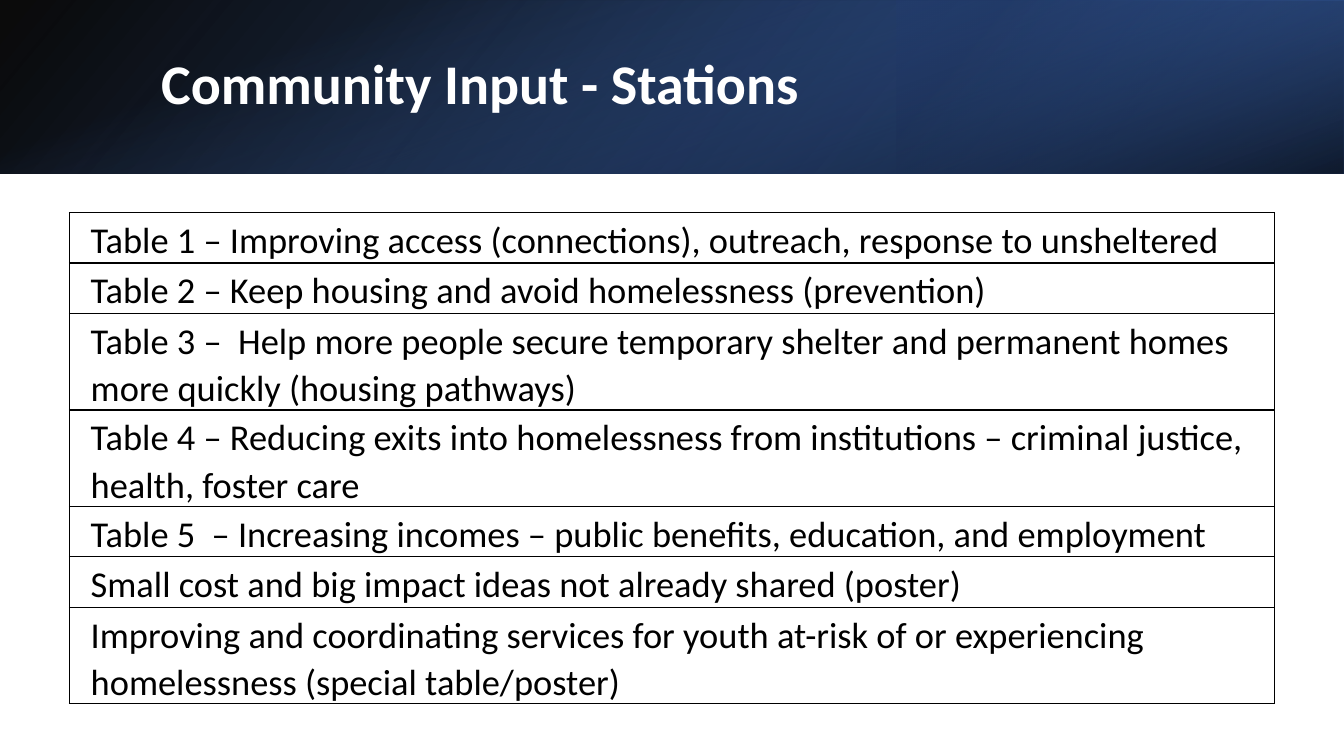
"""Build the Community Input stations slide."""
from lxml import etree
from pptx import Presentation
from pptx import util as u
from pptx.dml.color import RGBColor
from pptx.enum import shapes, text
from pptx.oxml import ns

COLORS = {"black": "000000", "white": "FFFFFF", "blue": "4472C4",
          "mid_blue": "2F5597", "navy": "203864"}
FONT = "Calibri"
BANNER_HEIGHT = 1.72

BANNER_LAYERS = [
    ((0, 0, 13.33, BANNER_HEIGHT), 0, True, 140,
     [(0, "black", 96), (100, "mid_blue", 100)]),
    ((8.89, 0, 4.44, BANNER_HEIGHT), 180, True, 320,
     [(19, "navy", 68), (100, "blue", 79)]),
    ((5.8, -5.8, BANNER_HEIGHT, 13.33), 90, False, 340,
     [(23, "blue", 0), (99, "black", 74)]),
]

STATIONS = [
    ("Table 1 – Improving access (connections), outreach, response to unsheltered", 0.5),
    ("Table 2 – Keep housing and avoid homelessness (prevention)", 0.5),
    ("Table 3 –  Help more people secure temporary shelter and permanent homes "
     "more quickly (housing pathways)", 0.93),
    ("Table 4 – Reducing exits into homelessness from institutions – criminal justice, "
     "health, foster care", 0.93),
    ("Table 5  – Increasing incomes – public benefits, education, and employment", 0.5),
    ("Small cost and big impact ideas not already shared (poster)", 0.5),
    ("Improving and coordinating services for youth at-risk of or experiencing "
     "homelessness (special table/poster)", 0.86),
]


def style_paragraph(paragraph, size, color, spacing, bold=False):
    paragraph.line_spacing = spacing
    paragraph.font.name = FONT
    paragraph.font.size = u.Pt(size)
    paragraph.font.bold = bold
    paragraph.font.color.rgb = RGBColor.from_string(COLORS[color])


def add_borders(cell, color, width):
    properties = cell._tc.get_or_add_tcPr()
    for side in ("lnL", "lnR", "lnT", "lnB"):
        line = etree.SubElement(properties, ns.qn(f"a:{side}"), w=str(u.Pt(width)))
        fill = etree.SubElement(line, ns.qn("a:solidFill"))
        etree.SubElement(fill, ns.qn("a:srgbClr"), val=COLORS[color])


presentation = Presentation()
presentation.slide_width = u.Inches(13.33)
presentation.slide_height = u.Inches(7.5)
slide = presentation.slides.add_slide(presentation.slide_layouts[6])

for box, rotation, flipped, angle, stops in BANNER_LAYERS:
    shape = slide.shapes.add_shape(
        shapes.MSO_SHAPE.RECTANGLE, *[u.Inches(length) for length in box])
    shape.shadow.inherit = False
    shape.rotation = rotation
    if flipped:
        shape._element.spPr.find(ns.qn("a:xfrm")).set("flipH", "1")
    shape.line.fill.background()
    shape.fill.gradient()
    shape.fill.gradient_angle = 360 - angle
    for stop, (position, color, opacity) in zip(shape.fill.gradient_stops, stops):
        stop.position = position / 100
        stop.color.rgb = RGBColor.from_string(COLORS[color])
    for element, (position, color, opacity) in zip(
            shape._element.spPr.iter(ns.qn("a:srgbClr")), stops):
        etree.SubElement(element, ns.qn("a:alpha"), val=str(opacity * 1000))

title = slide.shapes.add_textbox(
    u.Inches(1.5), u.Inches(0.38), u.Inches(10.98), u.Inches(0.96))
title.text_frame.word_wrap = True
title.text_frame.vertical_anchor = text.MSO_ANCHOR.MIDDLE
title.text_frame.text = "Community Input - Stations"
style_paragraph(title.text_frame.paragraphs[0], 40, "white", 0.9, bold=True)

table = slide.shapes.add_table(
    len(STATIONS), 1, u.Inches(0.69), u.Inches(2.11),
    u.Inches(11.95), u.Inches(4.87)).table
table.first_row = False
table.horz_banding = False
for row, (station, height) in zip(table.rows, STATIONS):
    row.height = u.Inches(height)
    cell = row.cells[0]
    cell.margin_left = cell.margin_right = u.Inches(0.21)
    cell.margin_top = u.Inches(0.03)
    cell.margin_bottom = 0
    cell.text = station
    style_paragraph(cell.text_frame.paragraphs[0], 26, "black", 1.07)
    add_borders(cell, "black", 1)
    cell.fill.background()

presentation.save("out.pptx")
